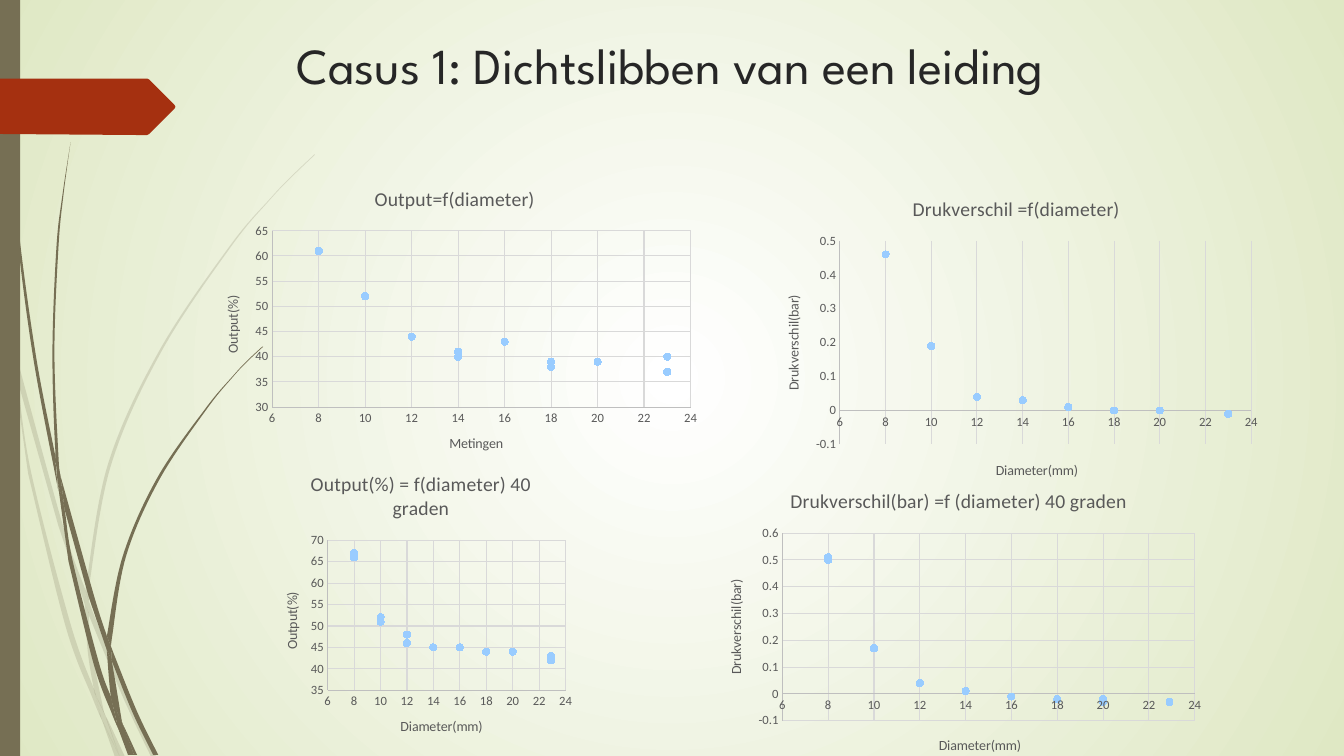
from lxml.etree import SubElement
from pptx import Presentation
from pptx.chart.data import XyChartData
from pptx.dml.color import RGBColor
from pptx.enum.chart import XL_CHART_TYPE as ChartType, XL_MARKER_STYLE as Marker, XL_TICK_MARK as Tick
from pptx.enum.shapes import MSO_SHAPE as Preset
from pptx.enum.text import MSO_ANCHOR as Anchor, PP_ALIGN as Align
from pptx.oxml import parse_xml
from pptx.oxml.ns import nsdecls, qn
from pptx.util import Inches, Pt

OLIVE, RUST, GREY, GRID, AXIS, DOT = "766F54", "A53010", "595959", "D9D9D9", "BFBFBF", "99CCFF"

PALE_BLADES = [
    ([(0.11, 3.5), (0.09, 3.22), (0, 2.82)], [(0, 2.99), (0.1, 3.44), (0.11, 3.5)]),
    ([(0.58, 5.22), (0.84, 5.99)], [(0.85, 5.86), (0.62, 5.2), (0.14, 3.45)], [(0.17, 3.76), (0.58, 5.22)]),
    ([(0.92, 6.07), (0.88, 5.96)], [(0.88, 6.1), (1.23, 6.94), (1.5, 7.51)], [(1.55, 7.51), (1.27, 6.92), (0.92, 6.07)]),
    ([(1.19, 7.51)], [(1.24, 7.51), (1.05, 7.11), (1.19, 7.51)]),
    ([(0.93, 6.83), (0.7, 6.19), (0.31, 4.69), (0.17, 3.76), (0.11, 3.5)],
     [(0.28, 4.7), (0.65, 6.21), (0.92, 6.93), (1.01, 7.14)], [(0.99, 7.07), (0.93, 6.83)]),
    ([(0.84, 5.99), (0.87, 6.46), (0.93, 6.83), (0.96, 6.92), (1.05, 7.11)],
     [(1.03, 7.06), (0.91, 6.46), (0.88, 6.1), (0.88, 6.08), (0.84, 5.99)]),
    ([(0.88, 5.84), (1.1, 4.62), (1.6, 3.49), (2.29, 2.45), (2.68, 1.98), (2.9, 1.75), (3.12, 1.54)],
     [(3.12, 1.53), (2.89, 1.75), (2.68, 1.97), (2.28, 2.44), (1.58, 3.48), (1.07, 4.61), (0.85, 5.84)],
     [(0.85, 5.86), (0.88, 5.96), (0.88, 5.84)]),
    ([(1.01, 7.14), (1.14, 7.51)], [(1.19, 7.51), (1.01, 7.14)]),
    ([(0.88, 6.08), (0.88, 6.1)], [(0.88, 5.96), (0.85, 5.86)], [(0.84, 5.99), (0.88, 6.08)]),
    ([(0.96, 6.92), (0.93, 6.83)], [(0.99, 7.07), (1.01, 7.14), (1.19, 7.51)], [(1.19, 7.51), (1.05, 7.11), (0.96, 6.92)]),
]
DARK_BLADES = [
    ([(0.07, 1.1), (0.17, 2.33), (0.33, 3.55), (0.56, 4.77), (0.57, 4.81)],
     [(0.55, 4.57), (0.55, 4.53), (0.36, 3.55), (0.19, 2.32), (0.08, 1.09), (0.05, 0.48), (0.04, 0)],
     [(0.03, 0), (0.04, 0.48), (0.07, 1.1)]),
    ([(0.88, 5.92), (1.06, 6.45)], [(1.06, 6.33), (1.06, 6.31), (0.93, 5.9), (0.6, 4.72)], [(0.64, 5.05), (0.88, 5.92)]),
    ([(1.13, 6.49), (1.1, 6.41)], [(1.11, 6.56), (1.32, 7.08), (1.52, 7.49)], [(1.57, 7.49), (1.36, 7.06), (1.13, 6.49)]),
    ([(1.1, 6.91), (0.98, 6.57), (0.72, 5.56), (0.64, 5.05), (0.57, 4.77)],
     [(0.68, 5.57), (0.93, 6.59), (1.11, 7.08), (1.17, 7.22)], [(1.16, 7.17), (1.1, 6.91)]),
    ([(0.6, 4.72), (0.58, 4.53), (0.54, 3.49), (0.58, 2.45), (0.63, 1.93), (0.7, 1.41)],
     [(0.7, 1.41), (0.62, 1.93), (0.56, 2.45), (0.52, 3.49), (0.55, 4.49), (0.6, 4.72)]),
    ([(1.33, 7.49)], [(1.36, 7.49), (1.22, 7.19), (1.33, 7.49)]),
    ([(0.57, 4.77), (0.64, 5.05)], [(0.6, 4.72), (0.55, 4.49)], [(0.55, 4.53), (0.57, 4.77)]),
    ([(1.11, 6.33), (1.25, 5.52), (1.58, 4.76), (2.05, 4.06), (2.31, 3.74), (2.45, 3.59), (2.61, 3.44)],
     [(2.6, 3.44), (2.45, 3.58), (2.31, 3.73), (2.04, 4.05), (1.56, 4.74), (1.22, 5.51), (1.06, 6.31)],
     [(1.1, 6.41), (1.11, 6.33)]),
    ([(1.17, 7.22), (1.27, 7.49)], [(1.31, 7.49), (1.17, 7.22)]),
    ([(1.06, 6.45), (1.1, 6.91), (1.16, 7.06), (1.22, 7.19)], [(1.21, 7.16), (1.11, 6.56), (1.09, 6.51), (1.06, 6.45)]),
    ([(1.06, 6.45), (1.09, 6.51), (1.11, 6.56)], [(1.1, 6.41), (1.06, 6.31)], [(1.06, 6.33), (1.06, 6.45)]),
    ([(1.16, 7.06), (1.1, 6.91)], [(1.16, 7.17), (1.17, 7.22), (1.3, 7.49)], [(1.33, 7.49), (1.22, 7.19), (1.16, 7.06)]),
]
ARROW = [(1.73, 1.08), (1.48, 1.33), (1.46, 1.34), (1.36, 1.34), (0, 1.33), (0, 0.78), (1.36, 0.78), (1.46, 0.78),
         (1.48, 0.79), (1.73, 1.04), (1.74, 1.06)]

DIAMETERS = [23, 23, 23, 20, 20, 18, 18, 16, 16, 14, 14, 12, 12, 10, 10, 8, 8]
DIAMETERS_40 = [22.9, 22.9] + DIAMETERS[3:]
CHARTS = [
    dict(box=(2.01, 1.69, 5, 3), plot=(0.69, 0.6, 4.15, 1.75), title="Output=f(diameter)",
         labels=("Metingen", "Output(%)"), scale=(30, 65, 5), rows=True, diameters=DIAMETERS,
         values=[37, 40, 40, 39, 39, 39, 38, 43, 43, 41, 40, 44, 44, 52, 52, 61, 61]),
    dict(box=(7.58, 1.79, 5, 3.17), plot=(0.75, 0.6, 4.08, 2.02), title="Drukverschil =f(diameter)",
         labels=("Diameter(mm)", "Drukverschil(bar)"), scale=(-0.1, 0.5, 0.1), rows=False, diameters=DIAMETERS,
         values=[-0.01, -0.01, -0.01, 0, 0, 0, 0, 0.01, 0.01, 0.03, 0.03, 0.04, 0.04, 0.19, 0.19, 0.46, 0.46]),
    dict(box=(2.61, 4.52, 3.13, 2.98), plot=(0.64, 0.84, 2.36, 1.49), title="Output(%) = f(diameter) 40 graden",
         labels=("Diameter(mm)", "Output(%)"), scale=(35, 70, 5), rows=True, diameters=DIAMETERS_40,
         values=[43, 42, 44, 44, 44, 44, 45, 45, 45, 45, 46, 48, 52, 51, 67, 66]),
    dict(box=(7.01, 4.69, 5, 3), plot=(0.75, 0.6, 4.09, 1.86), title="Drukverschil(bar) =f (diameter) 40 graden",
         labels=("Diameter(mm)", "Drukverschil(bar)"), scale=(-0.1, 0.6, 0.1), rows=True, diameters=DIAMETERS_40,
         values=[-0.03, -0.03, -0.03, -0.02, -0.02, -0.02, -0.01, -0.01, 0.01, 0.01, 0.04, 0.04, 0.17, 0.17, 0.51, 0.5]),
]


def color(value):
    return RGBColor.from_string(value)


def style_font(font, size, value, name="Calibri"):
    font.size, font.name, font.bold = Pt(size), name, False
    font.color.rgb = color(value)


def paint(shape, value, opacity=100):
    shape.shadow.inherit = False
    shape.fill.solid()
    shape.fill.fore_color.rgb = color(value)
    shape.line.fill.background()
    if opacity < 100:
        tint = shape.fill._xPr.find(qn("a:solidFill"))[0]
        SubElement(tint, qn("a:alpha"), val=str(opacity * 1000))


def bend(shape, edges):
    lines = iter(shape._element.findall(".//" + qn("a:lnTo")))
    for number, edge in enumerate(edges):
        if number:
            next(lines)
        padded = [edge[0], *edge, edge[-1]]
        for a, b, c, d in zip(padded, padded[1:], padded[2:], padded[3:]):
            first = [q + (r - p) / 6 for p, q, r in zip(a, b, c)]
            second = [r - (s - q) / 6 for q, r, s in zip(b, c, d)]
            line = next(lines)
            curve = parse_xml(f'<a:cubicBezTo {nsdecls("a")}/>')
            for x, y in (first, second, c):
                SubElement(curve, qn("a:pt"), x=str(round(x - shape.left)), y=str(round(y - shape.top)))
            line.getparent().replace(line, curve)


def add_outline(slide, left, top, edges, value, opacity=100):
    placed = [[(Inches(left + x), Inches(top + y)) for x, y in edge] for edge in edges]
    points = sum(placed, [])
    builder = slide.shapes.build_freeform(*points[0])
    builder.add_line_segments(points[1:], close=True)
    shape = builder.convert_to_shape()
    bend(shape, placed)
    paint(shape, value, opacity)


def add_background(slide):
    fill = slide.background.fill
    fill.gradient()
    for stop, value, position in zip(fill.gradient_stops, ("FFFFFF", "DFE8C4"), (0, 1)):
        stop.color.rgb = color(value)
        stop.position = position
    gradient = slide.background._cSld.find(".//" + qn("a:gradFill"))
    gradient.replace(gradient.find(qn("a:lin")), parse_xml(
        f'<a:path {nsdecls("a")} path="circle"><a:fillToRect l="50000" t="50000" r="50000" b="50000"/></a:path>'))


def add_decoration(slide, left, top, height):
    for blades, opacity in ((PALE_BLADES, 20), (DARK_BLADES, 100)):
        for edges in blades:
            add_outline(slide, left, top, edges, OLIVE, opacity)
    bar = slide.shapes.add_shape(Preset.RECTANGLE, Inches(left), Inches(top), Inches(0.2), Inches(height))
    paint(bar, OLIVE)
    add_outline(slide, left, top, [[corner] for corner in ARROW], RUST)


def add_title(slide, left, top, width, height):
    title = slide.shapes.title
    title.left, title.top, title.width, title.height = map(Inches, (left, top, width, height))
    frame = title.text_frame
    frame.word_wrap = True
    frame.vertical_anchor = Anchor.TOP
    frame.paragraphs[0].alignment = Align.LEFT
    run = frame.paragraphs[0].add_run()
    run.text = "Casus 1: Dichtslibben van een leiding"
    style_font(run.font, 36, "262626", "League Spartan")


def add_heading(owner, text, size):
    run = owner.text_frame.paragraphs[0].add_run()
    run.text = text
    style_font(run.font, size, GREY)


def style_axis(axis, label, scale, gridlines):
    axis.minimum_scale, axis.maximum_scale, axis.major_unit = scale
    axis.major_tick_mark = axis.minor_tick_mark = Tick.NONE
    axis.has_major_gridlines = gridlines
    if gridlines:
        axis.major_gridlines.format.line.color.rgb = color(GRID)
        axis.major_gridlines.format.line.width = Pt(0.75)
    axis.format.line.color.rgb = color(AXIS)
    axis.format.line.width = Pt(0.75)
    style_font(axis.tick_labels.font, 9, GREY)
    axis.tick_labels.number_format = "General"
    axis.tick_labels.number_format_is_linked = False
    add_heading(axis.axis_title, label, 10)


def place_plot(chart, box, plot):
    area = chart._chartSpace.chart.plotArea
    for previous in area.findall(qn("c:layout")):
        area.remove(previous)
    fractions = zip("xywh", plot, box[2:] * 2)
    lengths = "".join(f'<c:{key} val="{part / whole:.4f}"/>' for key, part, whole in fractions)
    area.insert(0, parse_xml(
        f'<c:layout {nsdecls("c")}><c:manualLayout><c:layoutTarget val="inner"/>'
        f'<c:xMode val="edge"/><c:yMode val="edge"/>{lengths}</c:manualLayout></c:layout>'))


def add_scatter(slide, box, plot, title, labels, scale, rows, diameters, values):
    data = XyChartData()
    points = data.add_series("Series 1")
    for diameter, value in zip(diameters, values):
        points.add_data_point(diameter, value)
    chart = slide.shapes.add_chart(ChartType.XY_SCATTER, *map(Inches, box), data).chart
    style_font(chart.font, 10, "000000")
    chart.has_legend = False
    add_heading(chart.chart_title, title, 14)
    style_axis(chart.category_axis, labels[0], (6, 24, 2), True)
    style_axis(chart.value_axis, labels[1], scale, rows)
    chart.plots[0].vary_by_categories = False
    series = chart.plots[0].series[0]
    series.smooth = False
    series.format.line.fill.background()
    series.marker.style, series.marker.size = Marker.CIRCLE, 5
    series.marker.format.fill.solid()
    series.marker.format.fill.fore_color.rgb = color(DOT)
    series.marker.format.line.color.rgb = color(DOT)
    place_plot(chart, box, plot)


presentation = Presentation()
presentation.slide_width, presentation.slide_height = Inches(13.33), Inches(7.5)
slide = presentation.slides.add_slide(presentation.slide_layouts[5])
add_background(slide)
add_decoration(slide, 0, 0, 7.5)
add_title(slide, 2.84, 0.29, 9.75, 1.4)
for chart in CHARTS:
    add_scatter(slide, **chart)
presentation.save("out.pptx")
